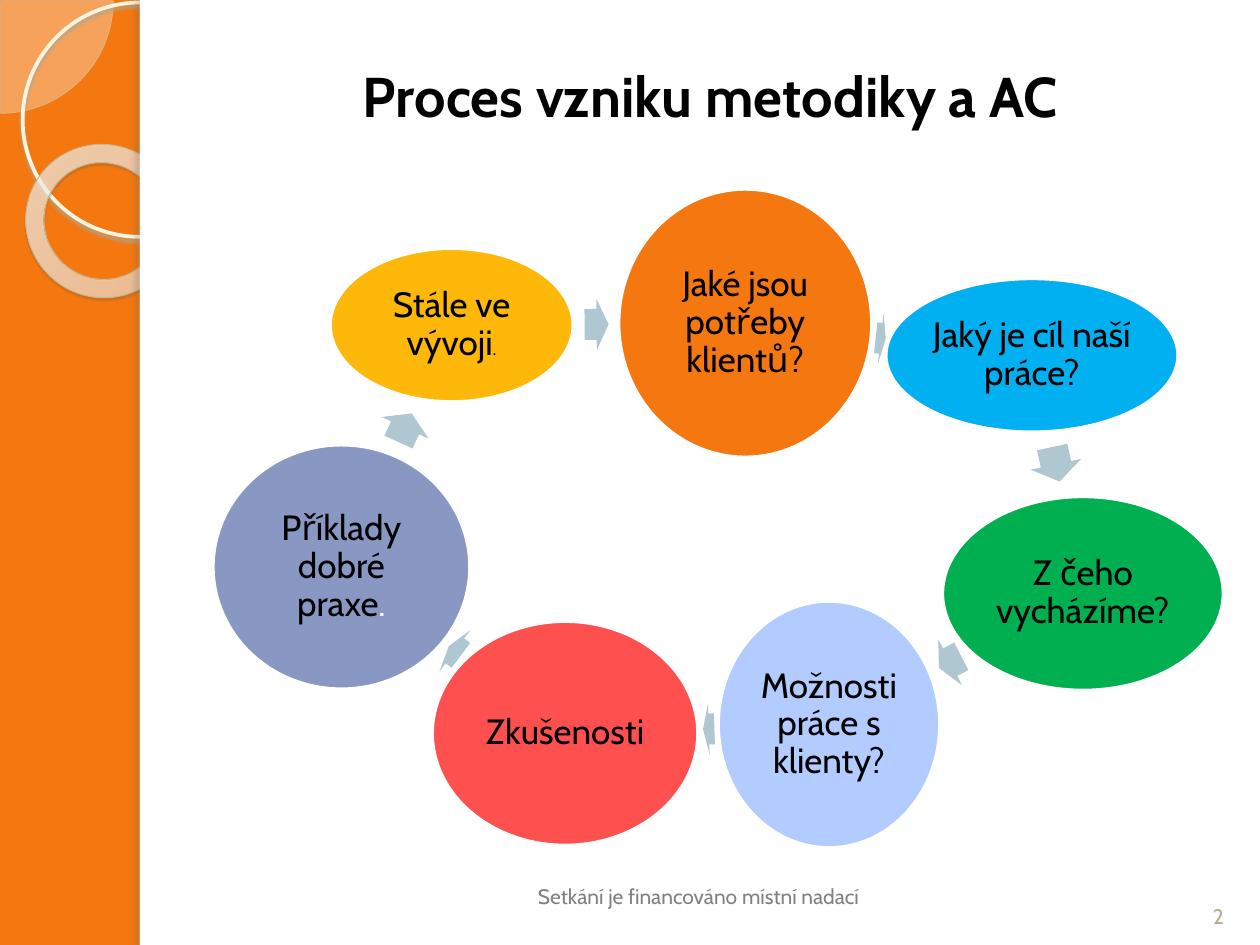
"""Build the slide showing the cycle in which the methodology comes about."""
import pptx
import pptx.dml.color
import pptx.enum.shapes
import pptx.enum.text
import pptx.oxml
import pptx.oxml.ns
import pptx.util

Inches = pptx.util.Inches
Pt = pptx.util.Pt
RGB = pptx.dml.color.RGBColor.from_string
SHAPE = pptx.enum.shapes.MSO_SHAPE
ANCHOR = pptx.enum.text.MSO_ANCHOR
qn = pptx.oxml.ns.qn
NS = pptx.oxml.ns.nsdecls("a")

COLORS = {
    "orange": "F47710", "white": "FFFFFF", "black": "000000",
    "cream": "FEFAF4", "sand": "D3C39F", "ring": "FFF5DE", "donut": "C7B893",
    "ring_shadow": "B0A68F", "donut_shadow": "5A5444", "edge_shadow": "736F63",
    "footer": "808080", "number": "B6A98A", "arrow": "AFC7D0",
    "blue": "00B0F0", "green": "00B050", "pale_blue": "B3CCFF",
    "red": "FF5050", "slate": "8898C3", "yellow": "FEB80A",
}


def draw(preset, box, fill=None, line=None, width=0, rotation=0, adjust=(), shadow=None):
    shape = slide.shapes.add_shape(preset, *map(Inches, box))
    shape.rotation = rotation
    for index, value in enumerate(adjust):
        shape.adjustments[index] = value
    if fill:
        shape.fill.solid()
        shape.fill.fore_color.rgb = RGB(COLORS[fill])
    else:
        shape.fill.background()
    if line:
        shape.line.color.rgb = RGB(COLORS[line])
        shape.line.width = Pt(width)
    else:
        shape.line.fill.background()
    shape.shadow.inherit = False
    if shadow:
        color, alpha, blur, distance, angle = shadow
        shape._element.spPr.find(qn("a:effectLst")).append(pptx.oxml.parse_xml(
            f'<a:outerShdw {NS} blurRad="{Pt(blur)}" dist="{Pt(distance)}" '
            f'dir="{angle * 60000}" algn="ctr" rotWithShape="0"><a:srgbClr val="{COLORS[color]}">'
            f'<a:alpha val="{alpha * 1000}"/></a:srgbClr></a:outerShdw>'))
    return shape


def write(shape, text, size=20, color="black", bold=False, anchor=ANCHOR.MIDDLE,
          inset=None, spacing=None, ending="", ending_size=20, ending_color="black"):
    frame = shape.text_frame
    frame.word_wrap = True
    frame.vertical_anchor = anchor
    if inset is not None:
        frame.margin_left = frame.margin_right = Inches(inset)
        frame.margin_top = frame.margin_bottom = Inches(inset)
    paragraph = frame.paragraphs[0]
    paragraph.alignment = pptx.enum.text.PP_ALIGN.CENTER
    if spacing:
        paragraph.line_spacing = spacing
    for words, points, shade in ((text, size, color), (ending, ending_size, ending_color)):
        if words:
            run = paragraph.add_run()
            run.text = words
            run.font.name = "Cabin"
            run.font.size = Pt(points)
            run.font.bold = bold
            run.font.color.rgb = RGB(COLORS[shade])


deck = pptx.Presentation()
deck.slide_width, deck.slide_height = Inches(10), Inches(7.5)
slide = deck.slides.add_slide(deck.slide_layouts[5])
slide.background.fill.solid()
slide.background.fill.fore_color.rgb = RGB(COLORS["orange"])

corner = draw(SHAPE.PIE, (-0.89, -0.89, 1.79, 1.79), "cream", "sand", 0.25, adjust=(0, 54))
corner_color = corner._element.spPr.find(qn("a:solidFill")).find(qn("a:srgbClr"))
corner_color.append(pptx.oxml.parse_xml(f'<a:alpha {NS} val="33000"/>'))
draw(SHAPE.OVAL, (0.18, 0.02, 1.86, 1.86), None, "ring", 2.15,
     shadow=("ring_shadow", 85, 2, 2, 90))
donut = draw(SHAPE.DONUT, (0.2, 1.15, 1.23, 1.21), None, "donut", 0.58, 38.6, (0.12,),
             ("donut_shadow", 35, 1, 1.2, 75))
stops = "".join(
    f'<a:gs pos="{place * 1000}"><a:srgbClr val="{color}"><a:alpha val="{alpha * 1000}"/></a:srgbClr></a:gs>'
    for place, color, alpha in ((0, "FFFCF6", 70), (70, "FFFEFB", 55), (100, "F0D28E", 60)))
donut_fill = donut._element.spPr.find(qn("a:noFill"))
donut_fill.getparent().replace(donut_fill, pptx.oxml.parse_xml(
    f'<a:gradFill {NS} rotWithShape="1"><a:gsLst>{stops}</a:gsLst><a:path path="circle">'
    '<a:fillToRect l="-408000" t="-50000" r="508000" b="150000"/></a:path></a:gradFill>'))
draw(SHAPE.RECTANGLE, (1.11, 0, 8.89, 7.5), "white")
panel_edge = draw(SHAPE.RECTANGLE, (1.11, 0, 0.08, 7.5), "white",
                  shadow=("edge_shadow", 25, 3, 3, 180))

title = slide.shapes.title
title.left, title.top, title.width, title.height = map(Inches, (1.54, 0.29, 8.2, 0.93))
write(title, "Proces vzniku metodiky a AC", size=32, bold=True)
panel_edge._element.addnext(title._element)

for text, box, color in (
    ("Setkání je financováno místní nadací", (3.5, 6.74, 4.09, 0.52), "footer"),
    ("2", (9.42, 6.9, 0.5, 0.52), "number"),
):
    write(slide.shapes.add_textbox(*map(Inches, box)), text, size=12, color=color,
          anchor=ANCHOR.BOTTOM)

STEPS = (
    ("Jaké jsou potřeby klientů?", (4.91, 1.5, 2.01, 2.13), "orange", {},
     (6.95, 2.48, 0.08), 6.4),
    ("Jaký je cíl naší práce?", (7.03, 2.21, 2.32, 1.22), "blue", {},
     (8.24, 3.48, 0.28), 77.9),
    ("Z čeho vycházíme?", (7.48, 3.94, 2.23, 1.54), "green", {},
     (7.44, 5.05, 0.2), 152.8),
    ("Možnosti práce s klienty?", (5.7, 4.77, 1.76, 1.96), "pale_blue", {},
     (5.58, 5.58, 0.09), 178.1),
    ("Zkušenosti", (3.43, 4.93, 2.11, 1.78), "red", {},
     (3.55, 4.96, 0.12), 216.8),
    ("Příklady dobré praxe", (1.69, 3.53, 2.04, 1.94), "slate",
     {"ending": ".", "ending_color": "white"}, (3.09, 3.19, 0.25), 294.7),
    ("Stále ve vývoji", (2.62, 1.97, 1.93, 1.22), "yellow",
     {"ending": ".", "ending_size": 11}, (4.64, 2.37, 0.19), 359.5),
)
for text, box, color, ending, arrow, angle in STEPS:
    step = draw(SHAPE.OVAL, box, color, "white", 2)
    write(step, text, inset=0.03, spacing=0.9, **ending)
    draw(SHAPE.RIGHT_ARROW, (*arrow, 0.41), "arrow", rotation=angle, adjust=(0.6, 0.5))

deck.save("out.pptx")
